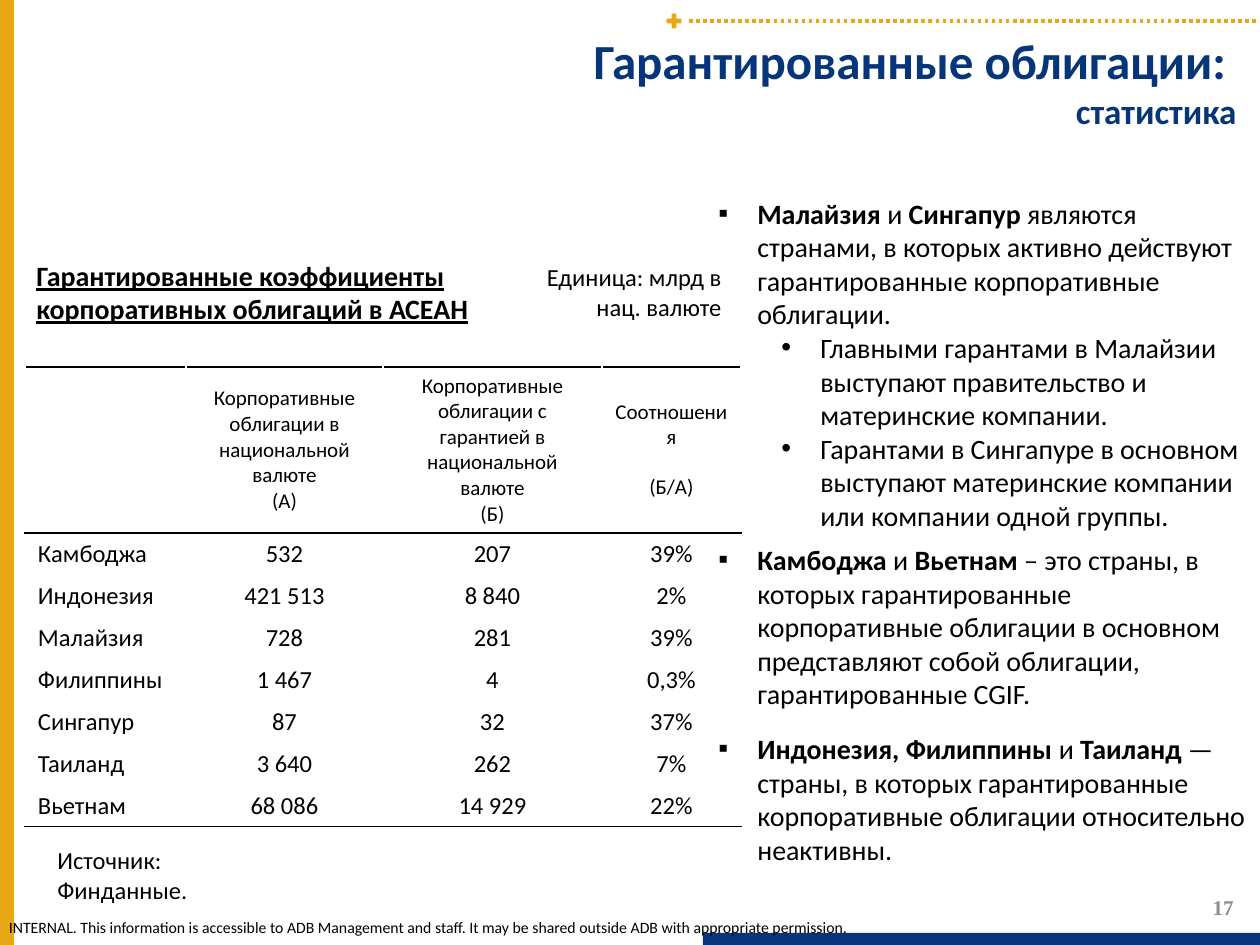
from lxml.etree import SubElement
from pptx import Presentation
from pptx.dml.color import RGBColor
from pptx.enum.dml import MSO_LINE_DASH_STYLE as Dash
from pptx.enum.shapes import MSO_CONNECTOR as Connector, MSO_SHAPE as Shape
from pptx.enum.text import MSO_ANCHOR as Anchor, PP_ALIGN as Align
from pptx.oxml.ns import qn
from pptx.util import Emu, Pt

COLORS = {"gold": "E8A713", "navy": "09347A", "title": "06357A",
          "black": "000000", "gray": "8C8C8C"}


def px(length):
    return Emu(round(length * 914400 / 126))


class SlideBuilder:
    """Draws styled elements on the current slide."""

    def __init__(self, page, font="Calibri"):
        self.page = page
        self.font = font

    def color(self, name):
        return RGBColor.from_string(COLORS[name])

    def style(self, para, size, color="black", bold=False, underline=False,
              align=Align.LEFT, font=None):
        para.alignment = align
        para.font.name = font or self.font
        para.font.size = Pt(size)
        para.font.bold = bold
        para.font.underline = underline
        para.font.color.rgb = self.color(color)

    def block(self, kind, left, top, width, height, color):
        shape = self.page.shapes.add_shape(kind, px(left), px(top), px(width), px(height))
        shape.shadow.inherit = False
        shape.fill.solid()
        shape.fill.fore_color.rgb = self.color(color)
        shape.line.fill.background()

    def dotted_line(self, left, right, y, color):
        line = self.page.shapes.add_connector(Connector.STRAIGHT, px(left), px(y), px(right), px(y))
        line.line.color.rgb = self.color(color)
        line.line.width = Pt(2)
        line.line.dash_style = Dash.ROUND_DOT
        SubElement(line._element.spPr, qn("a:effectLst"))

    def frame(self, left, top, width, height, inset=True):
        box = self.page.shapes.add_textbox(px(left), px(top), px(width), px(height))
        frame = box.text_frame
        frame.word_wrap = True
        if not inset:
            frame.margin_left = frame.margin_right = frame.margin_top = frame.margin_bottom = 0
        return frame

    def text(self, place, words, size, inset=True, **look):
        para = self.frame(*place, inset=inset).paragraphs[0]
        para.text = words
        self.style(para, size, **look)

    def title(self, place, lines):
        frame = self.frame(*place)
        for index, (words, size) in enumerate(lines):
            para = frame.add_paragraph() if index else frame.paragraphs[0]
            para.text = words
            self.style(para, size, "title", bold=True, align=Align.RIGHT)

    def bullets(self, place, items, size):
        frame = self.frame(*place)
        for index, (level, after, words) in enumerate(items):
            para = frame.add_paragraph() if index else frame.paragraphs[0]
            para.level = level
            para.space_after = Pt(after)
            props = para._p.get_or_add_pPr()
            props.set("marL", str(px(39 + 63 * level)))
            props.set("indent", str(px(-39)))
            SubElement(props, qn("a:buFont"), typeface="Arial")
            SubElement(props, qn("a:buChar"), char="▪•"[level])
            self.style(para, size)
            for part, piece in enumerate(words.split("*")):
                if piece:
                    span = para.add_run()
                    span.text = piece
                    if part % 2:
                        span.font.bold = True

    def border(self, cell, sides):
        props = cell._tc.get_or_add_tcPr()
        for index, side in enumerate(sides):
            line = props.makeelement(qn(f"a:{side}"), {"w": str(Pt(1))})
            fill = SubElement(line, qn("a:solidFill"))
            SubElement(fill, qn("a:srgbClr"), val=COLORS["black"])
            props.insert(index, line)

    def table(self, left, top, columns, heights, rows):
        table = self.page.shapes.add_table(len(rows), len(columns), px(left), px(top),
                                           px(sum(columns)), px(sum(heights))).table
        table.first_row = table.horz_banding = False
        for column, width in zip(table.columns, columns):
            column.width = px(width)
        edges = {0: ("lnT", "lnB"), 1: ("lnT",), len(rows) - 1: ("lnB",)}
        for r, (row, height) in enumerate(zip(rows, heights)):
            table.rows[r].height = px(height)
            for c, words in enumerate(row):
                cell = table.cell(r, c)
                cell.fill.background()
                cell.vertical_anchor = Anchor.MIDDLE if c else Anchor.TOP
                cell.margin_left = cell.margin_right = px(13)
                cell.margin_top = cell.margin_bottom = px(6)
                cell.text = words
                for para in cell.text_frame.paragraphs:
                    self.style(para, 14 if r else 12, align=Align.CENTER if c else Align.LEFT)
                self.border(cell, edges.get(r, ()))
        return table


def main():
    deck = Presentation()
    deck.slide_width, deck.slide_height = px(1260), px(945)
    slide = SlideBuilder(deck.slides.add_slide(deck.slide_layouts[6]))

    slide.block(Shape.RECTANGLE, 0, 0, 14, 945, "gold")
    slide.block(Shape.RECTANGLE, 703, 933, 557, 12, "navy")
    slide.dotted_line(689, 1260, 21, "gold")
    slide.block(Shape.MATH_PLUS, 664, 11, 20, 20, "gold")
    slide.text((9, 918, 844, 19), "INTERNAL. This information is accessible to ADB Management and staff. "
               "It may be shared outside ADB with appropriate permission.", 9, inset=False)
    slide.title((451, 24, 798, 98), [("Гарантированные облигации: ", 28), ("статистика", 20)])
    slide.text((953, 888, 293, 40), "17", 12, color="gray", bold=True,
               align=Align.RIGHT, font="Times New Roman")

    rows = [
        ("", "Корпоративные облигации в национальной валюте\n(А)",
         "Корпоративные облигации с гарантией в национальной валюте\n(Б)", "Соотношения\n(Б/А)"),
        ("Камбоджа", "532", "207", "39%"),
        ("Индонезия", "421 513", "8 840", "2%"),
        ("Малайзия", "728", "281", "39%"),
        ("Филиппины", "1 467", "4", "0,3%"),
        ("Сингапур", "87", "32", "37%"),
        ("Таиланд", "3 640", "262", "7%"),
        ("Вьетнам", "68 086", "14 929", "22%"),
    ]
    table = slide.table(25, 367, [161, 197, 219, 139], [166] + [42] * 7, rows)
    table.cell(0, 3).text_frame.paragraphs[1].space_before = Pt(14)

    slide.text((24, 252, 568, 81), "Гарантированные коэффициенты корпоративных облигаций в АСЕАН",
               16, bold=True, underline=True)
    slide.text((530, 256, 204, 72), "Единица: млрд в нац. валюте", 14, align=Align.RIGHT)
    slide.bullets((706, 190, 554, 723), [
        (0, 0, "*Малайзия *и *Сингапур *являются странами, в которых активно действуют "
               "гарантированные корпоративные облигации."),
        (1, 0, "Главными гарантами в Малайзии выступают правительство и материнские компании."),
        (1, 6, "Гарантами в Сингапуре в основном выступают материнские компании "
               "или компании одной группы."),
        (0, 12, "*Камбоджа *и *Вьетнам *– это страны, в которых гарантированные корпоративные "
                "облигации в основном представляют собой облигации, гарантированные CGIF."),
        (0, 0, "*Индонезия, Филиппины *и *Таиланд *— страны, в которых гарантированные "
               "корпоративные облигации относительно неактивны."),
    ], 16)
    slide.text((45, 839, 227, 72), "Источник: Финданные.", 14)
    deck.save("out.pptx")


if __name__ == "__main__":
    main()
